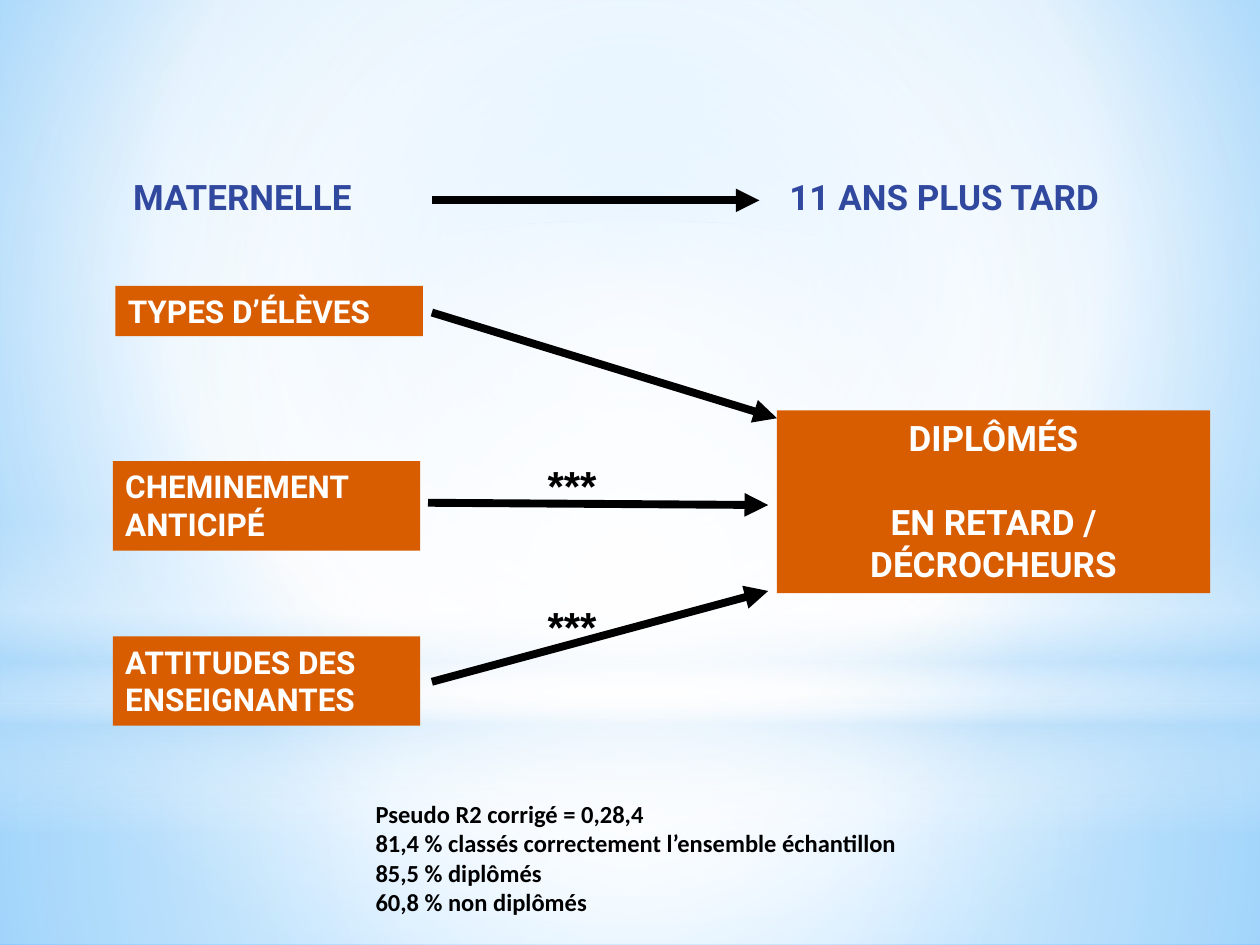
from lxml import etree
from pptx import Presentation
from pptx.dml.color import RGBColor
from pptx.enum.dml import MSO_FILL
from pptx.enum.shapes import MSO_CONNECTOR, MSO_SHAPE
from pptx.enum.text import MSO_ANCHOR, PP_ALIGN
from pptx.oxml.ns import qn
from pptx.util import Pt

RECT, OVAL = MSO_SHAPE.RECTANGLE, MSO_SHAPE.OVAL
LINE = MSO_CONNECTOR.STRAIGHT
TOP = MSO_ANCHOR.TOP
LEFT, CENTER = PP_ALIGN.LEFT, PP_ALIGN.CENTER
GRADIENT = MSO_FILL.GRADIENT
WIDTH, HEIGHT = 720, 540
BLACK, WHITE, BLUE, ORANGE = "000000", "FFFFFF", "31489F", "D85C00"
PALE = "B4DCFA"
MIDDLE = (50, 50, 50, 50)


def color(code):
    return RGBColor.from_string(code)


def shade(fill, holder, stops, focus=None):
    """Fill with (position, colour, opacity) stops, around focus or downwards."""
    fill.gradient()
    assert fill.type == GRADIENT
    grad = holder.find(qn("a:gradFill"))
    for child in list(grad):
        grad.remove(child)
    grad.set("rotWithShape", "1")
    series = etree.SubElement(grad, qn("a:gsLst"))
    for place, code, alpha in stops:
        stop = etree.SubElement(series, qn("a:gs"), pos=str(place * 1000))
        tint = etree.SubElement(stop, qn("a:srgbClr"), val=code)
        if alpha < 100:
            etree.SubElement(tint, qn("a:alpha"), val=str(alpha * 1000))
    if focus:
        way = etree.SubElement(grad, qn("a:path"))
        way.set("path", "circle")
        sides = {side: str(n * 1000) for side, n in zip("ltrb", focus)}
        etree.SubElement(way, qn("a:fillToRect"), **sides)
    else:
        etree.SubElement(grad, qn("a:lin"), ang="5400000", scaled="0")


def panel(slide, kind, box):
    shape = slide.shapes.add_shape(kind, *map(Pt, box))
    shape.shadow.inherit = False
    shape.line.fill.background()
    return shape


def write(shape, lines, size=18, font="Roboto", ink=WHITE, align=LEFT,
          wrap=True, gaps=()):
    """Set bold lines; gaps maps a line's index to the space before it."""
    frame = shape.text_frame
    frame.word_wrap = wrap
    frame.vertical_anchor = TOP
    gaps = dict(gaps)
    for i, line in enumerate(lines):
        para = frame.paragraphs[0] if i == 0 else frame.add_paragraph()
        para.alignment = align
        if i in gaps:
            para.space_before = Pt(gaps[i])
        run = para.add_run()
        run.text = line
        run.font.size = Pt(size)
        run.font.name = font
        run.font.bold = True
        run.font.color.rgb = color(ink)


def label(slide, box, lines, **style):
    write(slide.shapes.add_textbox(*map(Pt, box)), lines, **style)


def block(slide, box, lines, **style):
    shape = panel(slide, RECT, box)
    shape.fill.solid()
    shape.fill.fore_color.rgb = color(ORANGE)
    write(shape, lines, **style)


def arrow(slide, start, end):
    link = slide.shapes.add_connector(LINE, *map(Pt, start + end))
    link.line.color.rgb = color(BLACK)
    link.line.width = Pt(4.5)
    props = link.line._get_or_add_ln()
    etree.SubElement(props, qn("a:tailEnd"), type="triangle")
    etree.SubElement(link._element.spPr, qn("a:effectLst"))


def backdrop(slide, box):
    x, y, w, h = box
    fill = slide.background.fill
    holder = slide.element.cSld.bg.bgPr
    shade(fill, holder,
          [(0, "9ED5FF", 100), (60, WHITE, 100), (100, "5BB9FF", 100)],
          (20, 10, 20, 60))
    sky = 402
    layers = [
        (RECT, sky, h - sky, MIDDLE,
         [(0, WHITE, 91), (37, WHITE, 76), (100, PALE, 79)]),
        (RECT, 0, sky, MIDDLE,
         [(0, WHITE, 89), (48, WHITE, 62), (100, PALE, 79)]),
        (RECT, 297, 180, None,
         [(0, WHITE, 0), (29, WHITE, 30), (45, PALE, 40),
          (55, WHITE, 26), (65, PALE, 60), (100, WHITE, 0)]),
        (OVAL, 126, sky, MIDDLE, [(0, WHITE, 100), (56, WHITE, 0)]),
    ]
    for kind, top, tall, focus, stops in layers:
        shape = panel(slide, kind, (x, y + top, w, tall))
        shade(shape.fill, shape._element.spPr, stops, focus)


def timeline(slide, box):
    x, y, w, h = box
    style = {"size": 20, "ink": BLUE}
    label(slide, (x, y, 174, h), ["MATERNELLE"], **style)
    label(slide, (x + 375, y, w - 375, h), ["11 ANS PLUS TARD"], **style)
    arrow(slide, (x + 178, y + 18), (x + 365, y + 18))


def factors(slide, box):
    """Stack the three factors, each with its arrow and significance mark."""
    x, y, w, h = box
    tall = 51.1
    step = (h - tall) / 2
    rows = [
        (1.5, 28.8, ["TYPES D’ÉLÈVES"], 182.3, 15.2, (379.5, 75.6), None),
        (0, tall, ["CHEMINEMENT", "ANTICIPÉ"],
         180.1, 23.8, (374.5, 125.2), 95.8),
        (0, tall, ["ATTITUDES DES", "ENSEIGNANTES"],
         182.3, 26, (374.5, 174.3), 176.4),
    ]
    for i, (dx, high, lines, out, drop, tip, mark) in enumerate(rows):
        top = y + i * step
        arrow(slide, (x + out, top + drop), (x + tip[0], y + tip[1]))
        if mark:
            label(slide, (x + 241.3, y + mark, 42.5, 36), ["***"], size=24,
                  font="Arial", ink=BLACK, wrap=False)
        block(slide, (x + dx, top, w, high), lines)


def outcome(slide, box):
    block(slide, box, ["DIPLÔMÉS", "EN RETARD /", "DÉCROCHEURS"],
          size=20, align=CENTER, gaps={1: 24})


def results(slide, box):
    label(slide, box, [
        "Pseudo R2 corrigé = 0,28,4",
        "81,4 % classés correctement l’ensemble échantillon",
        "85,5 % diplômés",
        "60,8 % non diplômés",
    ], size=14, font="Calibri", ink=BLACK)


def main():
    deck = Presentation()
    deck.slide_width, deck.slide_height = Pt(WIDTH), Pt(HEIGHT)
    slide = deck.slides.add_slide(deck.slide_layouts[6])
    backdrop(slide, (0, 0, WIDTH, HEIGHT))
    timeline(slide, (69, 96.5, 618, 31.5))
    factors(slide, (64.5, 163.4, 175.7, 251.3))
    outcome(slide, (444, 234.5, 247.5, 104.4))
    results(slide, (207.5, 453, 336, 75))
    deck.save("out.pptx")


if __name__ == "__main__":
    main()
